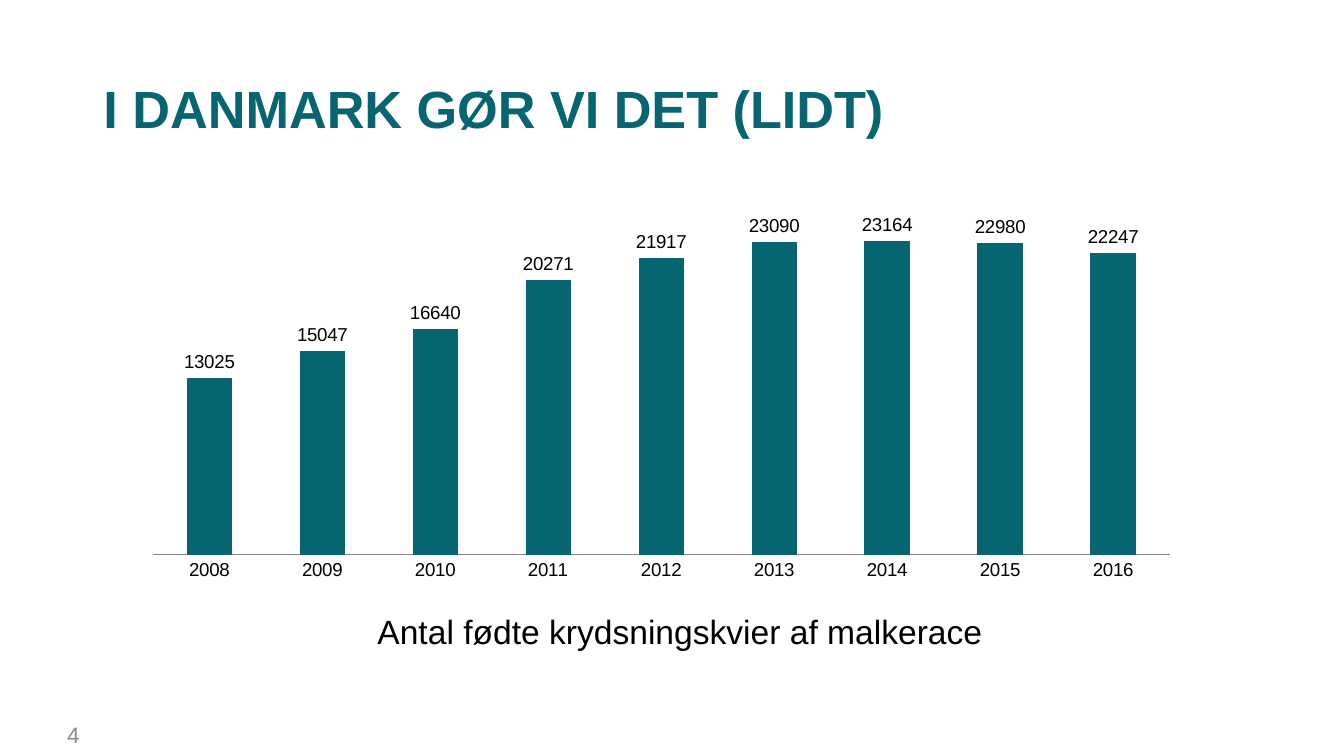
"""Build the slide on crossbred dairy heifers born in Denmark."""
from dataclasses import dataclass

from pptx import Presentation
from pptx.chart import data as cd
from pptx.dml import color
from pptx.enum import chart as ce, text as te
from pptx.util import Inches, Pt

FONT = "Arial"
COLOURS = {"teal": "076471", "black": "000000", "grey": "8C8C8C", "axis": "868686"}
BIRTHS = {
    "2008": 13025, "2009": 15047, "2010": 16640,
    "2011": 20271, "2012": 21917, "2013": 23090,
    "2014": 23164, "2015": 22980, "2016": 22247,
}


@dataclass(frozen=True)
class Area:
    left: float
    top: float
    width: float
    height: float

    def lengths(self) -> tuple:
        return tuple(Inches(v) for v in (self.left, self.top, self.width, self.height))


def rgb(name: str) -> color.RGBColor:
    return color.RGBColor.from_string(COLOURS[name])


def style_font(font, size: float, colour: str, bold: bool = False) -> None:
    font.name, font.size, font.bold = FONT, Pt(size), bold
    font.color.rgb = rgb(colour)


def write(shape, words: str, *, size: float, colour: str = "black", bold: bool = False,
          align=te.PP_ALIGN.LEFT, anchor=te.MSO_ANCHOR.TOP, wrap: bool = True,
          fit=te.MSO_AUTO_SIZE.NONE) -> None:
    frame = shape.text_frame
    frame.auto_size, frame.word_wrap, frame.vertical_anchor = fit, wrap, anchor
    line = frame.paragraphs[0]
    line.alignment = align
    run = line.add_run()
    run.text = words
    style_font(run.font, size, colour, bold)


def draw_births(slide, area: Area, births: dict[str, int]) -> None:
    figures = cd.CategoryChartData()
    figures.categories = list(births)
    figures.add_series("Series 1", list(births.values()))
    chart = slide.shapes.add_chart(
        ce.XL_CHART_TYPE.COLUMN_CLUSTERED, *area.lengths(), figures).chart
    chart.has_legend = chart.has_title = False
    style_font(chart.font, 10, "black")

    years, counts = chart.category_axis, chart.value_axis
    years.major_tick_mark = years.minor_tick_mark = ce.XL_TICK_MARK.NONE
    years.format.line.color.rgb = rgb("axis")
    years.format.line.width = Pt(0.75)
    counts.minimum_scale, counts.maximum_scale = 0, 25000
    counts.has_major_gridlines = counts.visible = False

    plot = chart.plots[0]
    plot.gap_width, plot.overlap, plot.vary_by_categories = 150, -25, False
    columns = plot.series[0]
    columns.format.fill.solid()
    columns.format.fill.fore_color.rgb = rgb("teal")
    labels = columns.data_labels
    labels.show_value = True
    labels.position = ce.XL_LABEL_POSITION.OUTSIDE_END
    style_font(labels.font, 10, "black")


def main() -> None:
    deck = Presentation()
    deck.slide_width = Inches(10)
    deck.slide_height = deck.slide_width * 9 // 16
    slide = deck.slides.add_slide(deck.slide_layouts[5])

    title = slide.shapes.title
    title.left, title.top, title.width, title.height = Area(0.67, 0.33, 8.83, 0.94).lengths()
    write(title, "I DANMARK GØR VI DET (LIDT)", size=28, colour="teal", bold=True,
          anchor=te.MSO_ANCHOR.MIDDLE)

    page_number = slide.shapes.add_textbox(*Area(0, 5.32, 0.69, 0.3).lengths())
    write(page_number, "4", size=12, colour="grey", align=te.PP_ALIGN.RIGHT)

    draw_births(slide, Area(0.98, 1.55, 7.88, 2.83), BIRTHS)

    caption = slide.shapes.add_textbox(*Area(2.71, 4.5, 4.75, 0.4).lengths())
    write(caption, "Antal fødte krydsningskvier af malkerace", size=18, wrap=False,
          fit=te.MSO_AUTO_SIZE.SHAPE_TO_FIT_TEXT)

    deck.save("out.pptx")


if __name__ == "__main__":
    main()
